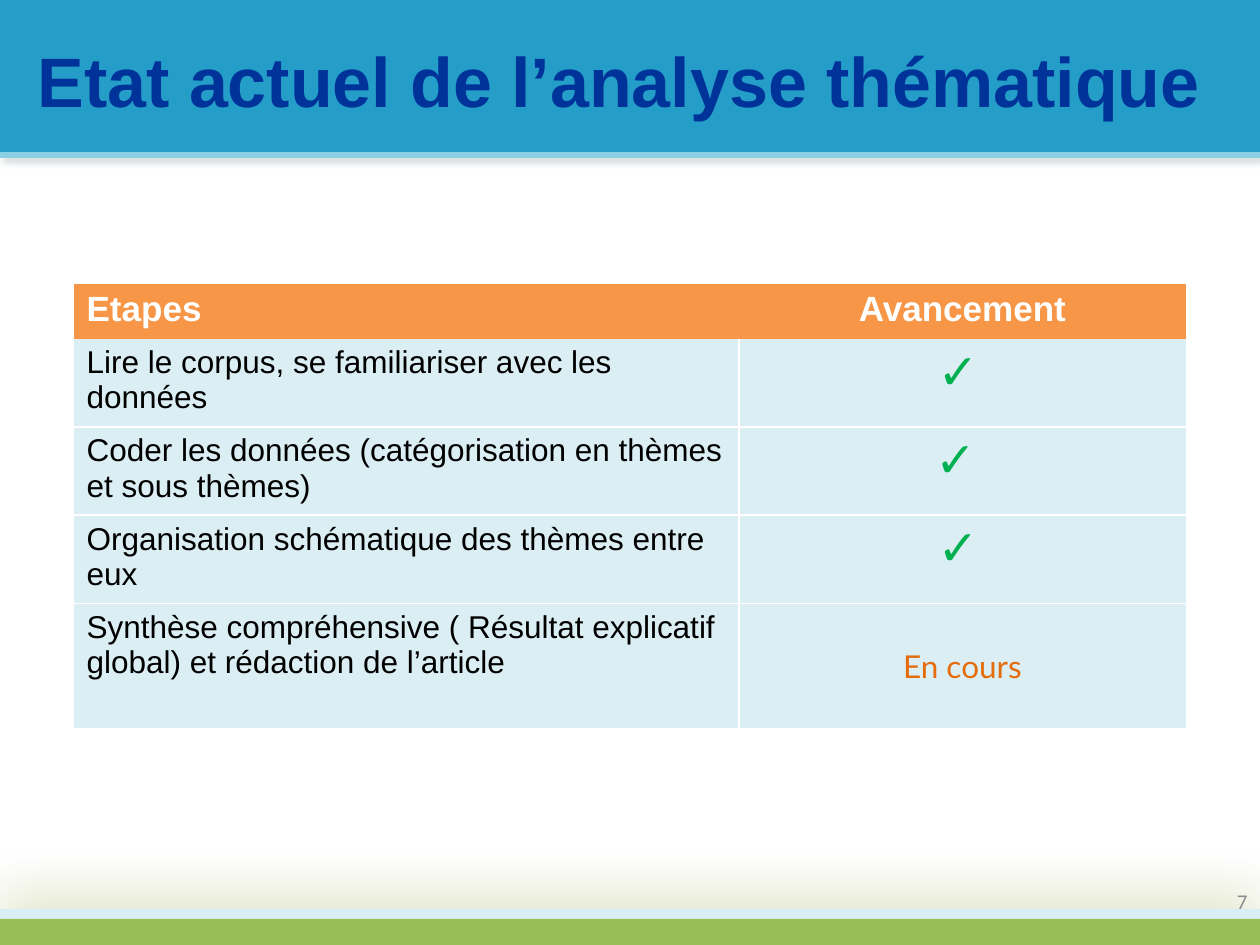
from lxml import etree
from pptx import Presentation
from pptx.dml.color import RGBColor
from pptx.enum.shapes import MSO_CONNECTOR, MSO_SHAPE
from pptx.enum.text import MSO_ANCHOR, PP_ALIGN
from pptx.oxml.ns import qn
from pptx.util import Emu, Pt

LEFT, CENTER, RIGHT = PP_ALIGN.LEFT, PP_ALIGN.CENTER, PP_ALIGN.RIGHT
TOP, MIDDLE = MSO_ANCHOR.TOP, MSO_ANCHOR.MIDDLE
RECTANGLE = MSO_SHAPE.RECTANGLE
STRAIGHT = MSO_CONNECTOR.STRAIGHT
NO_STYLE = "{2D5ABB26-0587-4C30-8999-92F81FD0307C}"
WIDTH, HEIGHT = 1260, 945
WHITE, BLACK, ORANGE, PALE = "FFFFFF", "000000", "F79646", "DBEEF4"
GREEN, DARK_ORANGE = "00B050", "E46C0A"


def px(length):
    return Emu(round(length * 914400 / 126))


def color(value):
    return RGBColor.from_string(value)


def write(frame, *runs, align=LEFT, anchor=TOP, font="Arial", hue=BLACK, bold=False):
    frame.word_wrap = True
    frame.vertical_anchor = anchor
    paragraph = frame.paragraphs[0]
    paragraph.alignment = align
    for words, size in runs:
        run = paragraph.add_run()
        run.text = words
        run.font.name = font
        run.font.size = Pt(size)
        run.font.bold = bold
        run.font.color.rgb = color(hue)


def add_shadow(shape, hue=None, alpha=0, blur=0, distance=0, angle=0):
    effects = etree.SubElement(shape._element.spPr, qn("a:effectLst"))
    if hue:
        outer = etree.SubElement(
            effects, qn("a:outerShdw"), blurRad=str(Pt(blur)), dist=str(Pt(distance)),
            dir=str(angle * 60000), algn="t", rotWithShape="0")
        shade = etree.SubElement(outer, qn("a:srgbClr"), val=hue)
        etree.SubElement(shade, qn("a:alpha"), val=str(alpha * 1000))


def add_borders(cell, sides):
    properties = cell._tc.get_or_add_tcPr()
    for position, side in enumerate(sides):
        line = etree.Element(qn(f"a:ln{side}"), w=str(Pt(1)))
        fill = etree.SubElement(line, qn("a:solidFill"))
        etree.SubElement(fill, qn("a:srgbClr"), val=WHITE)
        properties.insert(position, line)


class Deck:
    """Hold the style and the current slide, and add elements to it."""

    def __init__(self):
        self.file = Presentation()
        self.file.slide_width, self.file.slide_height = px(WIDTH), px(HEIGHT)
        self.slide = self.file.slides.add_slide(self.file.slide_layouts[5])
        self.shapes = self.slide.shapes

    def band(self, top, height, fill, **shadow):
        band = self.shapes.add_shape(RECTANGLE, 0, px(top), px(WIDTH), px(height))
        band.fill.solid()
        band.fill.fore_color.rgb = color(fill)
        band.line.fill.background()
        add_shadow(band, **shadow)

    def rule(self, top, stroke, weight, **shadow):
        rule = self.shapes.add_connector(STRAIGHT, 0, px(top), px(WIDTH), px(top))
        rule.line.color.rgb = color(stroke)
        rule.line.width = Pt(weight)
        add_shadow(rule, **shadow)

    def title(self, words, left, top, width, height):
        title = self.shapes.title
        title.left, title.top = px(left), px(top)
        title.width, title.height = px(width), px(height)
        write(title.text_frame, (words, 40), anchor=MIDDLE, hue="003399", bold=True)
        self.shapes._spTree.append(title._element)

    def page_number(self, number, left, top, width, height):
        box = self.shapes.add_textbox(px(left), px(top), px(width), px(height))
        write(box.text_frame, (number, 12), align=RIGHT, anchor=MIDDLE,
              font="Calibri", hue="8C8C8C")

    def table(self, left, top, widths, heights, rows):
        table = self.shapes.add_table(
            len(heights), len(widths), px(left), px(top),
            px(sum(widths)), px(sum(heights))).table
        table._tbl.tblPr.find(qn("a:tableStyleId")).text = NO_STYLE
        for column, width in zip(table.columns, widths):
            column.width = px(width)
        for row, height in zip(table.rows, heights):
            row.height = px(height)
        last = len(rows) - 1
        for r, row in enumerate(rows):
            for c, (runs, style) in enumerate(row):
                cell = table.cell(r, c)
                cell.fill.solid()
                cell.fill.fore_color.rgb = color(PALE if r else ORANGE)
                cell.vertical_anchor = style.get("anchor", TOP)
                write(cell.text_frame, *runs, **style)
                if r:
                    sides = ("L" if c else "R") + "T" * (r > 1) + "B" * (r < last)
                    add_borders(cell, sides)


def main():
    deck = Deck()
    deck.band(0, 155, "249EC8")
    deck.rule(155, "8AD0E5", 3.5, hue="82929B", alpha=40, blur=4, distance=3, angle=45)
    deck.band(909, 25, "D8EFF7", hue="889B29", alpha=47, blur=32, distance=3, angle=270)
    deck.band(919, 26, "97BF55")
    deck.title("Etat actuel de l’analyse thématique", 25, 0, 1191, 158)
    deck.page_number("7", 966, 876, 294, 50)

    header = {"hue": WHITE, "bold": True}
    done = {"align": CENTER, "hue": GREEN}
    ongoing = {"align": CENTER, "anchor": MIDDLE, "font": "Lato", "hue": DARK_ORANGE}
    check = [("✓", 28), (" ", 18)]
    steps = [
        ("Lire le corpus, se familiariser avec les données", check, done),
        ("Coder les données (catégorisation en thèmes et sous thèmes)",
         [("✓ ", 28)], done),
        ("Organisation schématique des thèmes entre eux", check, done),
        ("Synthèse compréhensive ( Résultat explicatif global) et rédaction de l’article",
         [("En cours", 18)], ongoing),
    ]
    rows = [[([("Etapes", 20)], header),
             ([("Avancement", 20)], {**header, "align": CENTER})]]
    rows += [[([(step, 18)], {}), (status, style)] for step, status, style in steps]
    deck.table(74, 284, [665, 447], [52, 88, 83, 88, 125], rows)
    deck.file.save("out.pptx")


if __name__ == "__main__":
    main()
